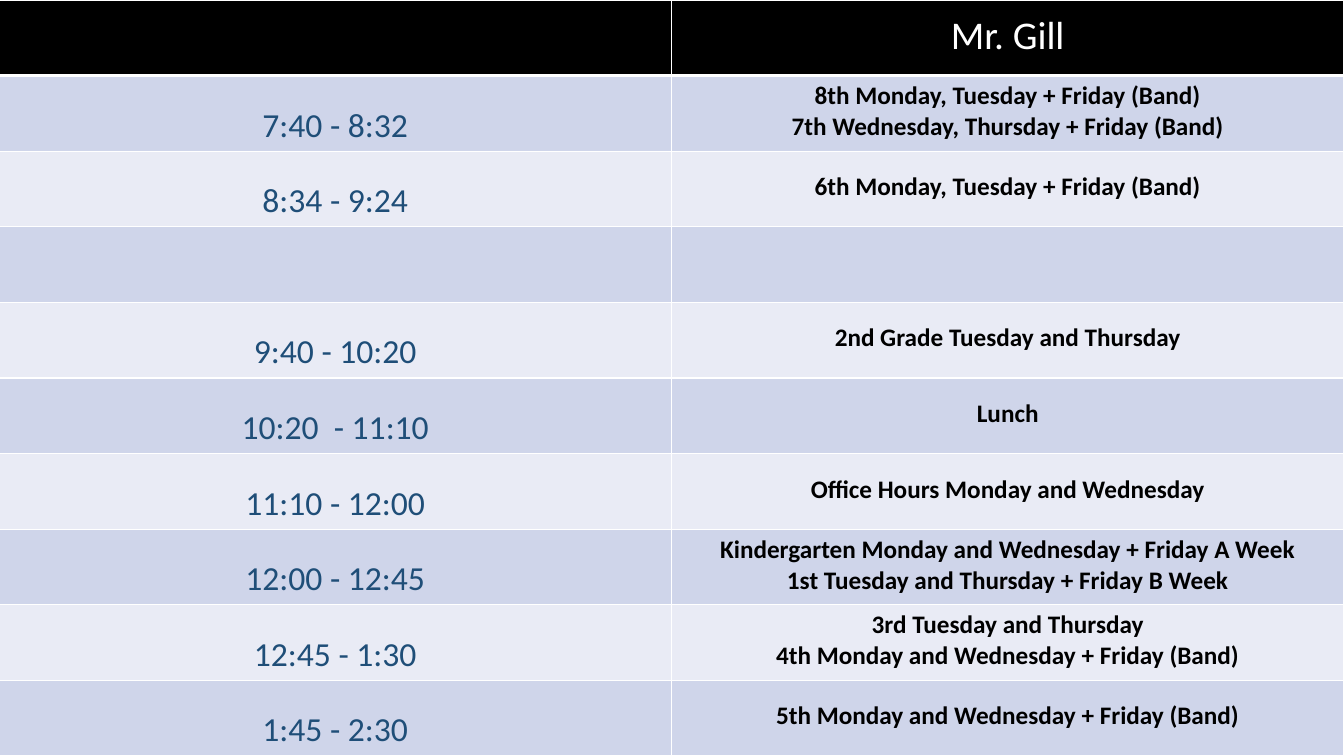
from dataclasses import dataclass

import lxml.etree
import pptx
import pptx.dml.color
import pptx.enum.text
import pptx.oxml.ns
import pptx.table
import pptx.util

Inches = pptx.util.Inches
Anchor = pptx.enum.text.MSO_ANCHOR


@dataclass(frozen=True)
class Period:
    time: str = ""
    classes: str = ""


@dataclass(frozen=True)
class TextStyle:
    size: int
    color: str
    bold: bool
    anchor: Anchor


HEADER = TextStyle(28, "FFFFFF", False, Anchor.MIDDLE)
TIME = TextStyle(24, "1F4E78", False, Anchor.BOTTOM)
CLASSES = TextStyle(18, "000000", True, Anchor.MIDDLE)
BANDS = ("CFD5EA", "E9EBF5")

PERIODS = [
    Period("7:40 - 8:32", "8th Monday, Tuesday + Friday (Band)\n"
                          "7th Wednesday, Thursday + Friday (Band)"),
    Period("8:34 - 9:24", "6th Monday, Tuesday + Friday (Band)"),
    Period(),
    Period("9:40 - 10:20", "2nd Grade Tuesday and Thursday"),
    Period("10:20  - 11:10", "Lunch"),
    Period("11:10 - 12:00", "Office Hours Monday and Wednesday"),
    Period("12:00 - 12:45", "Kindergarten Monday and Wednesday + Friday A Week\n"
                            "1st Tuesday and Thursday + Friday B Week"),
    Period("12:45 - 1:30", "3rd Tuesday and Thursday\n"
                           "4th Monday and Wednesday + Friday (Band)"),
    Period("1:45 - 2:30", "5th Monday and Wednesday + Friday (Band)"),
]


def rgb(color: str) -> pptx.dml.color.RGBColor:
    return pptx.dml.color.RGBColor.from_string(color)


def set_borders(cell: pptx.table._Cell, top: int, bottom: int) -> None:
    """Draw white cell borders; call before the fill, which must follow them in the XML."""
    tc_pr = cell._tc.get_or_add_tcPr()
    for side, width in (("L", 1), ("R", 1), ("T", top), ("B", bottom)):
        ln = lxml.etree.SubElement(tc_pr, pptx.oxml.ns.qn(f"a:ln{side}"),
                                   w=str(pptx.util.Pt(width)))
        fill = lxml.etree.SubElement(ln, pptx.oxml.ns.qn("a:solidFill"))
        lxml.etree.SubElement(fill, pptx.oxml.ns.qn("a:srgbClr"), val="FFFFFF")


def fill_cell(cell: pptx.table._Cell, text: str, style: TextStyle, fill: str) -> None:
    cell.fill.solid()
    cell.fill.fore_color.rgb = rgb(fill)
    cell.vertical_anchor = style.anchor
    cell.margin_left = cell.margin_right = cell.margin_top = Inches(0.01)
    cell.margin_bottom = Inches(0.05)
    cell.text = text
    for p in cell.text_frame.paragraphs:
        p.alignment = pptx.enum.text.PP_ALIGN.CENTER
        p.font.name = "Calibri"
        p.font.size = pptx.util.Pt(style.size)
        p.font.bold = style.bold
        p.font.color.rgb = rgb(style.color)


def add_schedule(s: pptx.slide.Slide) -> None:
    rows = [Period(classes="Mr. Gill"), *PERIODS]
    table = s.shapes.add_table(len(rows), 2, Inches(-0.01), 0,
                               Inches(13.34), Inches(7.5)).table
    for column in table.columns:
        column.width = Inches(6.67)
    for i, period in enumerate(rows):
        table.rows[i].height = Inches(0.75)
        fill = BANDS[(i - 1) % 2] if i else "000000"
        styles = (TIME, CLASSES) if i else (HEADER, HEADER)
        for j, text in enumerate((period.time, period.classes)):
            cell = table.cell(i, j)
            set_borders(cell, top=3 if i == 1 else 1, bottom=1 if i else 3)
            fill_cell(cell, text, styles[j], fill)


def main() -> None:
    prs = pptx.Presentation()
    prs.slide_width, prs.slide_height = Inches(13.33), Inches(7.5)
    s = prs.slides.add_slide(prs.slide_layouts[6])
    s.background.fill.solid()
    s.background.fill.fore_color.rgb = rgb("000000")
    add_schedule(s)
    prs.save("out.pptx")


if __name__ == "__main__":
    main()
